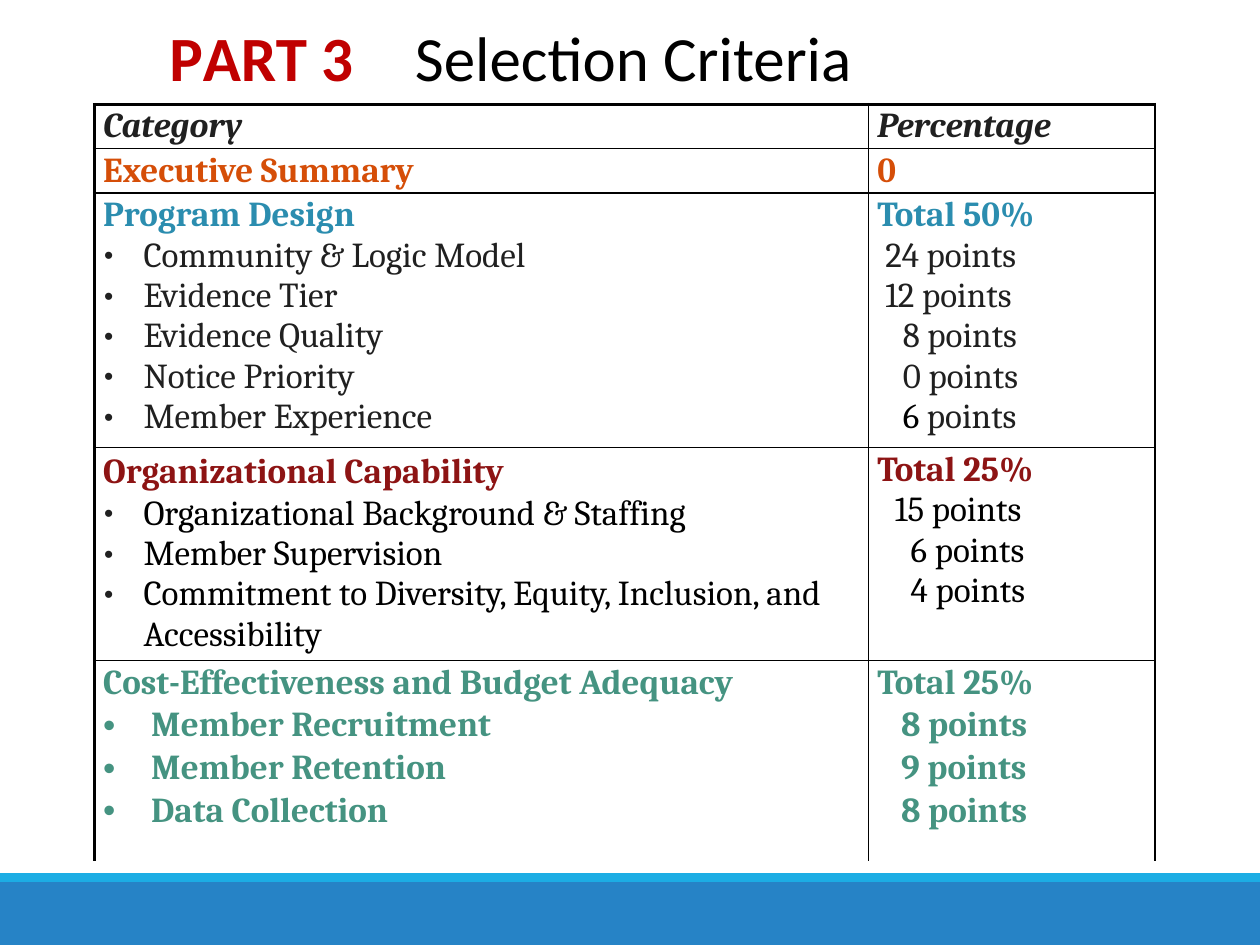
import dataclasses

import pptx
import pptx.dml.color
import pptx.enum.shapes
import pptx.enum.text
import pptx.oxml
import pptx.oxml.ns
import pptx.util
from lxml import etree

Pt = pptx.util.Pt


@dataclasses.dataclass(frozen=True)
class Theme:
    title_font: str = "Calibri"
    body_font: str = "Cambria"
    title_size: float = 36
    body_size: float = 20
    black: str = "000000"
    ink: str = "202020"
    title_red: str = "C00000"
    orange: str = "D54E08"
    teal: str = "2B8DAF"
    maroon: str = "8D1414"
    green: str = "459381"
    band: str = "2683C6"
    stripe: str = "1CADE4"


THEME = Theme()


@dataclasses.dataclass(frozen=True)
class Line:
    """One paragraph of a cell; spans holds (text, colour) pairs."""
    spans: tuple
    bold: bool = False
    italic: bool = False
    left: float = 5
    hanging: float = 0
    before: float = 0
    spacing: float = 0
    bullet_size: int = 100
    bullet_color: str = ""


def heading(text, color, **options):
    return Line(((text, color),), bold=True, before=1.3, **options)


def item(text, color, **options):
    return Line(((text, color),), left=28, hanging=22.5, bullet_size=75,
                bullet_color=THEME.ink, **options)


def points(value, left, color=THEME.ink, value_color=None):
    return Line(((f"{value} ", value_color or color), ("points", color)), left=left)


def build_rows():
    """Return (height, category lines, percentage lines) for each row."""
    ink, black, green = THEME.ink, THEME.black, THEME.green
    design = ("Community & Logic Model", "Evidence Tier", "Evidence Quality",
              "Notice Priority", "Member Experience")
    staffing, *capability = (
        "Organizational Background & Staffing", "Member Supervision",
        "Commitment to Diversity, Equity, Inclusion, and Accessibility")
    cost = ("Member Recruitment", "Member Retention", "Data Collection")
    return [
        (25.1, [heading("Category", ink, italic=True)],
         [heading("Percentage", ink, italic=True)]),
        (25.1, [heading("Executive Summary", THEME.orange)],
         [heading("0", THEME.orange)]),
        (145.2,
         [heading("Program Design", THEME.teal)] + [item(name, ink) for name in design],
         [heading("Total 50%", THEME.teal), points(24, 9.5), points(12, 9.5),
          points(8, 19.5), points(0, 19.5), points(6, 19.5, value_color=black)]),
        (121.6,
         [heading("Organizational Capability", THEME.maroon, spacing=24),
          item(staffing, black, spacing=24)] + [item(name, black) for name in capability],
         [heading("Total 25%", THEME.maroon), points(15, 15, black),
          points(6, 24, black), points(4, 24, black)]),
        (114.4,
         [heading("Cost-Effectiveness and Budget Adequacy", green)]
         + [heading(name, green, left=32.4, hanging=27.4) for name in cost],
         [heading("Total 25%", green)]
         + [heading(f"{value} points", green, left=18.5) for value in (8, 9, 8)]),
    ]


def rgb(color):
    return pptx.dml.color.RGBColor.from_string(color)


def add_xml(parent, tag, **attributes):
    child = etree.SubElement(parent, pptx.oxml.ns.qn(tag))
    for name, value in attributes.items():
        child.set(name, str(value))
    return child


def add_span(para, text, font, size, color, bold=False, italic=False):
    span = para.add_run()
    span.text = text
    span.font.name = font
    span.font.size = Pt(size)
    span.font.bold = bold
    span.font.italic = italic
    span.font.color.rgb = rgb(color)
    return span


def set_margins(target, top):
    target.margin_left = target.margin_right = target.margin_bottom = 0
    target.margin_top = Pt(top)


def write_line(para, line):
    para.space_before = Pt(line.before)
    if line.spacing:
        para.line_spacing = Pt(line.spacing)
    properties = para._p.get_or_add_pPr()
    properties.set("marL", str(Pt(line.left)))
    properties.set("indent", str(-Pt(line.hanging)))
    if line.hanging:
        if line.bullet_color:
            add_xml(add_xml(properties, "a:buClr"), "a:srgbClr", val=line.bullet_color)
        add_xml(properties, "a:buSzPct", val=line.bullet_size * 1000)
        add_xml(properties, "a:buFont", typeface="Arial")
        add_xml(properties, "a:buChar", char="•")
    for text, color in line.spans:
        add_span(para, text, THEME.body_font, THEME.body_size, color,
                 line.bold, line.italic)


def set_border(cell, side, width):
    border = add_xml(cell._tc.get_or_add_tcPr(), f"a:ln{side}", w=Pt(width))
    if width:
        add_xml(add_xml(border, "a:solidFill"), "a:srgbClr", val=THEME.black)
    else:
        add_xml(border, "a:noFill")


def add_title(page, left, top, width, height):
    box = page.shapes.add_textbox(Pt(left), Pt(top), Pt(width), Pt(height))
    frame = box.text_frame
    frame.word_wrap = True
    frame.vertical_anchor = pptx.enum.text.MSO_ANCHOR.BOTTOM
    set_margins(frame, 0.9)
    para = frame.paragraphs[0]
    para.space_before = Pt(0.9)
    properties = para._p.get_or_add_pPr()
    properties.set("marL", str(Pt(0.9)))
    add_xml(add_xml(properties, "a:tabLst"), "a:tab", pos=Pt(140.4), algn="l")
    style = (THEME.title_font, THEME.title_size)
    initial = add_span(para, "P", *style, THEME.title_red, bold=True)
    initial.font._element.set("spc", "-320")
    add_span(para, "ART 3\t", *style, THEME.title_red, bold=True)
    add_span(para, "Selection Criteria", *style, THEME.black)


def add_criteria_table(page, left, top, width, height):
    rows = build_rows()
    table = page.shapes.add_table(len(rows), 2, Pt(left), Pt(top),
                                  Pt(width), Pt(height)).table
    table.first_row = table.horz_banding = False
    for column, share in zip(table.columns, (0.73, 0.27)):
        column.width = Pt(round(width * share, 1))
    for row, (row_height, *contents) in enumerate(rows):
        table.rows[row].height = Pt(row_height)
        for column, lines in enumerate(contents):
            cell = table.cell(row, column)
            set_margins(cell, 0.7 if row == 0 else 1.4)
            # The outer left and top edges are heavy; the bottom is open.
            set_border(cell, "L", 2.25 if column == 0 else 1)
            set_border(cell, "R", 1)
            set_border(cell, "T", 2.25 if row == 0 else 1)
            set_border(cell, "B", 0 if row == len(rows) - 1 else 1)
            cell.fill.background()
            frame = cell.text_frame
            for index, line in enumerate(lines):
                para = frame.add_paragraph() if index else frame.paragraphs[0]
                write_line(para, line)


def add_footer(page, left, top, width, height):
    stripe = 5
    for offset, depth, color in ((stripe, height - stripe, THEME.band),
                                 (0, stripe, THEME.stripe)):
        bar = page.shapes.add_shape(pptx.enum.shapes.MSO_SHAPE.RECTANGLE, Pt(left),
                                    Pt(top + offset), Pt(width), Pt(depth))
        bar.shadow.inherit = False
        bar.fill.solid()
        bar.fill.fore_color.rgb = rgb(color)
        bar.line.fill.background()


def main():
    deck = pptx.Presentation()
    deck.slide_width, deck.slide_height = Pt(720), Pt(540)
    page = deck.slides.add_slide(deck.slide_layouts[6])
    add_footer(page, 0, 499, 720, 41)
    add_title(page, 95.8, 9.4, 408, 44.6)
    add_criteria_table(page, 54, 59.8, 606, 431.4)
    deck.save("out.pptx")


if __name__ == "__main__":
    main()
